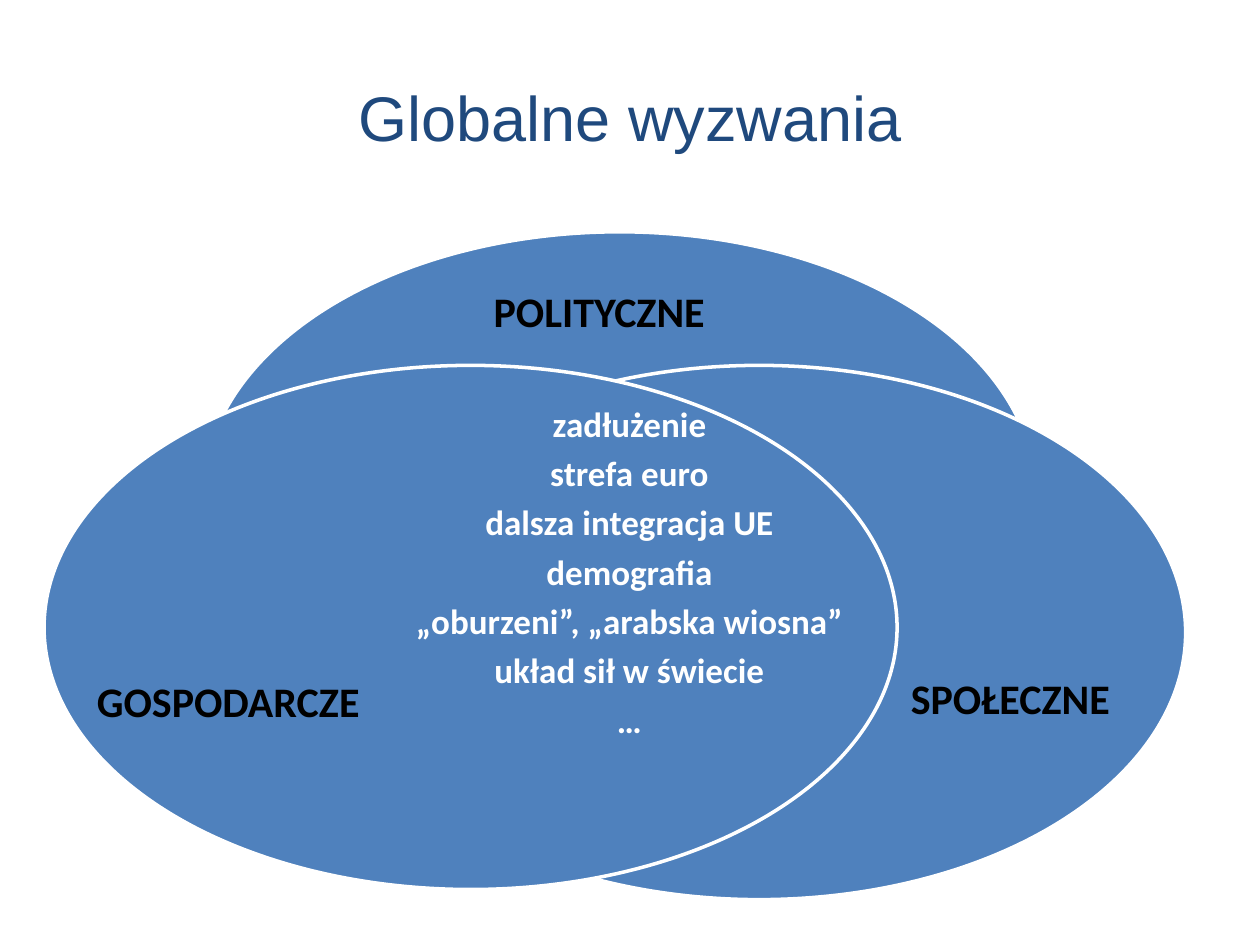
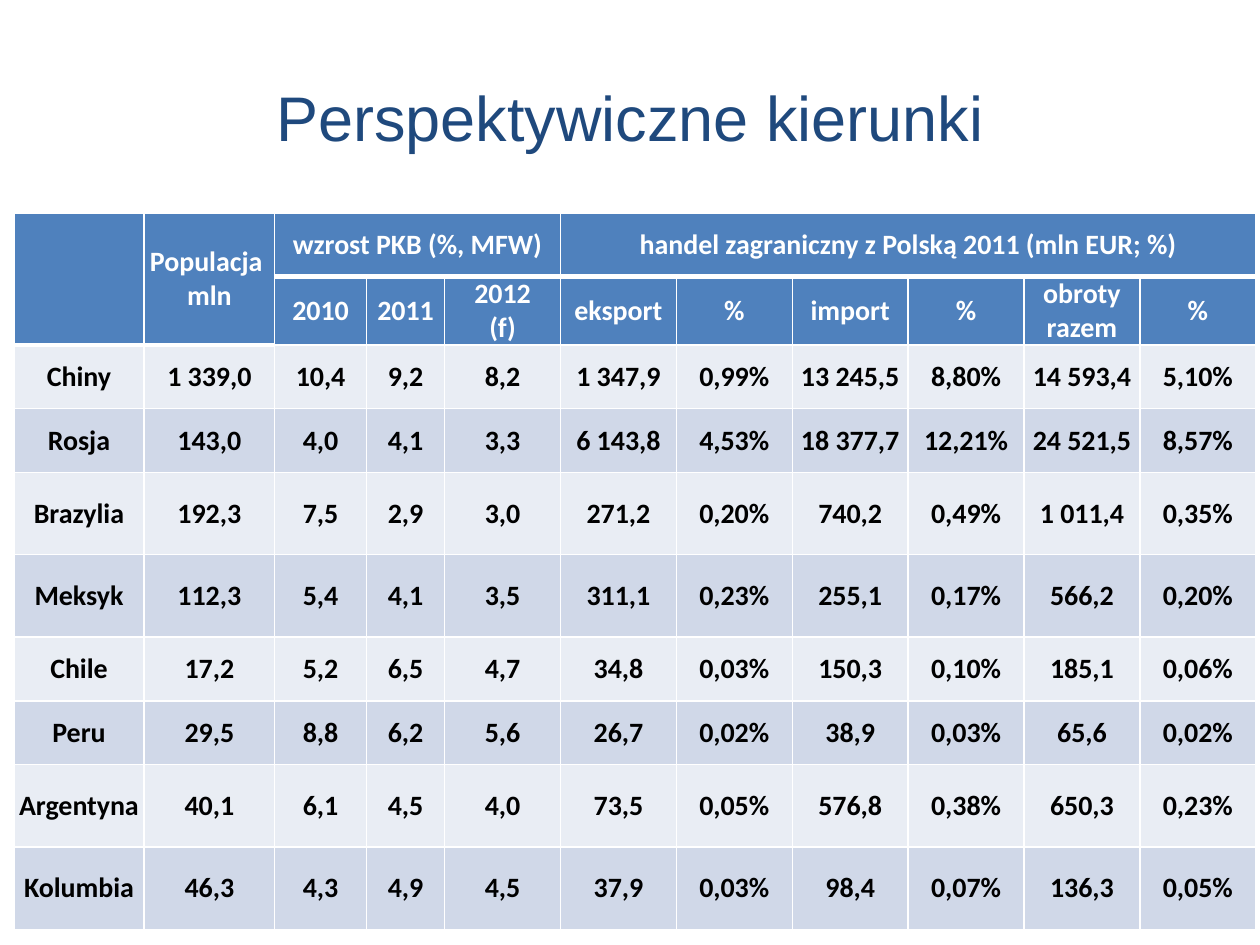
from dataclasses import dataclass

from lxml.etree import SubElement
from pptx import Presentation
from pptx.dml.color import RGBColor
from pptx.enum.shapes import MSO_SHAPE
from pptx.enum.text import MSO_ANCHOR, MSO_AUTO_SIZE, PP_ALIGN
from pptx.oxml.ns import qn
from pptx.util import Inches, Pt


@dataclass(frozen=True)
class Theme:
    navy: str = "1F497D"
    blue: str = "4F81BD"
    white: str = "FFFFFF"
    black: str = "000000"
    bands: tuple = ("E9EDF4", "D0D8E8")
    head: str = "Arial"
    body: str = "Calibri"
    title: int = 36
    label: int = 24
    list: int = 20
    cell: int = 16
    thin: int = 1
    edge: int = 2
    thick: int = 3


class Deck:
    cols, rows = 20, 15

    def __init__(self, theme):
        self.theme = theme
        self.prs = Presentation()
        self.prs.slide_width, self.prs.slide_height = Inches(10), Inches(7.5)
        self.slide = None

    def grid(self, left, top, width, height):
        col = self.prs.slide_width / self.cols
        row = self.prs.slide_height / self.rows
        return [round(n) for n in (left * col, top * row, width * col, height * row)]

    def style(self, para, size, color, face=None, bold=True, align=PP_ALIGN.CENTER):
        para.alignment = align
        font = para.font
        font.name = face or self.theme.body
        font.size, font.bold = Pt(size), bold
        font.color.rgb = RGBColor.from_string(color)

    def page(self, title):
        self.slide = self.prs.slides.add_slide(self.prs.slide_layouts[5])
        box = self.slide.shapes.title
        box.left, box.top, box.width, box.height = self.grid(1, 0.6, 18, 2.5)
        box.text_frame.text = title
        box.text_frame.vertical_anchor = MSO_ANCHOR.MIDDLE
        self.style(box.text_frame.paragraphs[0], self.theme.title, self.theme.navy,
                   self.theme.head, False)

    def oval(self, *place):
        shape = self.slide.shapes.add_shape(MSO_SHAPE.OVAL, *self.grid(*place))
        shape.shadow.inherit = False
        shape.fill.solid()
        shape.fill.fore_color.rgb = RGBColor.from_string(self.theme.blue)
        shape.line.color.rgb = RGBColor.from_string(self.theme.white)
        shape.line.width = Pt(self.theme.edge)

    def text(self, lines, place, size, color, align=PP_ALIGN.LEFT, pitch=None, gap=0):
        frame = self.slide.shapes.add_textbox(*self.grid(*place)).text_frame
        frame.word_wrap = True
        frame.auto_size = MSO_AUTO_SIZE.SHAPE_TO_FIT_TEXT
        frame.text = "\n".join(lines)
        for para in frame.paragraphs:
            para.line_spacing = pitch
            para.space_after = Pt(gap)
            self.style(para, size, color, align=align)

    def border(self, cell, base):
        props = cell._tc.get_or_add_tcPr()
        for side in "LRTB":
            width = base if side == "B" else self.theme.thin
            line = SubElement(props, qn(f"a:ln{side}"), w=str(Pt(width)))
            fill = SubElement(line, qn("a:solidFill"))
            SubElement(fill, qn("a:srgbClr"), val=self.theme.white)

    def cell(self, cell, text, fill, color, base):
        cell.text = text
        cell.vertical_anchor = MSO_ANCHOR.MIDDLE
        cell.margin_left = cell.margin_right = Inches(0.03)
        cell.margin_top = cell.margin_bottom = 0
        self.border(cell, base)
        cell.fill.solid()
        cell.fill.fore_color.rgb = RGBColor.from_string(fill)
        for para in cell.text_frame.paragraphs:
            self.style(para, self.theme.cell, color)

    def table(self, data, left, top, widths, heights, spans, heads):
        place = self.grid(left, top, sum(widths), sum(heights))
        table = self.slide.shapes.add_table(len(data), len(widths), *place).table
        table.horz_banding = False
        for col, width in zip(table.columns, widths):
            col.width = self.grid(0, 0, width, 0)[2]
        for row, height in zip(table.rows, heights):
            row.height = self.grid(0, 0, 0, height)[3]
        tall = {col for row, col, end, _ in spans if end > row}
        for r, line in enumerate(data):
            top_part = r < heads
            fill = self.theme.blue if top_part else self.theme.bands[(r - heads) % 2]
            color = self.theme.white if top_part else self.theme.black
            for c, text in enumerate(line):
                heavy = r == 0 or (top_part and c in tall)
                base = self.theme.thick if heavy else self.theme.thin
                self.cell(table.cell(r, c), text, fill, color, base)
        for row, col, end, last in spans:
            table.cell(row, col).merge(table.cell(end, last))


OVALS = [
    (3.22, 3.68, 13.23, 8.38),
    (5.28, 5.8, 13.54, 8.48),
    (0.7, 5.8, 13.54, 8.32),
]
LABELS = [
    ("SPOŁECZNE", (14.26, 10.58, 3.78, 1)),
    ("POLITYCZNE", (7.64, 4.44, 3.94, 1)),
    ("GOSPODARCZE", (1.34, 10.62, 4.72, 1)),
]
ISSUES = [
    "zadłużenie", "strefa euro", "dalsza integracja UE", "demografia",
    "„oburzeni”, „arabska wiosna”", "układ sił w świecie", "…",
]
TRADE = [line.split("|") for line in (
    "|Populacja \vmln|wzrost PKB (%, MFW)|||handel zagraniczny z Polską 2011 (mln EUR; %)|||||",
    "||2010|2011|2012\v(f)|eksport|%|import|%|obroty razem|%",
    "Chiny|1 339,0|10,4|9,2|8,2|1 347,9|0,99%|13 245,5|8,80%|14 593,4|5,10%",
    "Rosja|143,0|4,0|4,1|3,3|6 143,8|4,53%|18 377,7|12,21%|24 521,5|8,57%",
    "Brazylia|192,3|7,5|2,9|3,0|271,2|0,20%|740,2|0,49%|1 011,4|0,35%",
    "Meksyk|112,3|5,4|4,1|3,5|311,1|0,23%|255,1|0,17%|566,2|0,20%",
    "Chile|17,2|5,2|6,5|4,7|34,8|0,03%|150,3|0,10%|185,1|0,06%",
    "Peru|29,5|8,8|6,2|5,6|26,7|0,02%|38,9|0,03%|65,6|0,02%",
    "Argentyna|40,1|6,1|4,5|4,0|73,5|0,05%|576,8|0,38%|650,3|0,23%",
    "Kolumbia|46,3|4,3|4,9|4,5|37,9|0,03%|98,4|0,07%|136,3|0,05%",
)]
WIDTHS = [2.07, 2.07, 1.46, 1.24] + [1.84] * 7
HEIGHTS = [1.01, 1.07] + [1.01, 1.01, 1.31, 1.31] * 2
SPANS = [(0, 0, 1, 0), (0, 1, 1, 1), (0, 2, 0, 4), (0, 5, 0, 10)]


def main():
    theme = Theme()
    deck = Deck(theme)

    deck.page("Globalne wyzwania")
    for place in OVALS:
        deck.oval(*place)
    for name, place in LABELS:
        deck.text([name], place, theme.label, theme.black)
    deck.text(ISSUES, (5.9, 6.36, 8.18, 5.86), theme.list, theme.white,
              PP_ALIGN.CENTER, 0.9, 6.6)

    deck.page("Perspektywiczne kierunki")
    deck.table(TRADE, 0.22, 3.38, WIDTHS, HEIGHTS, SPANS, heads=2)

    deck.prs.save("out.pptx")


if __name__ == "__main__":
    main()
